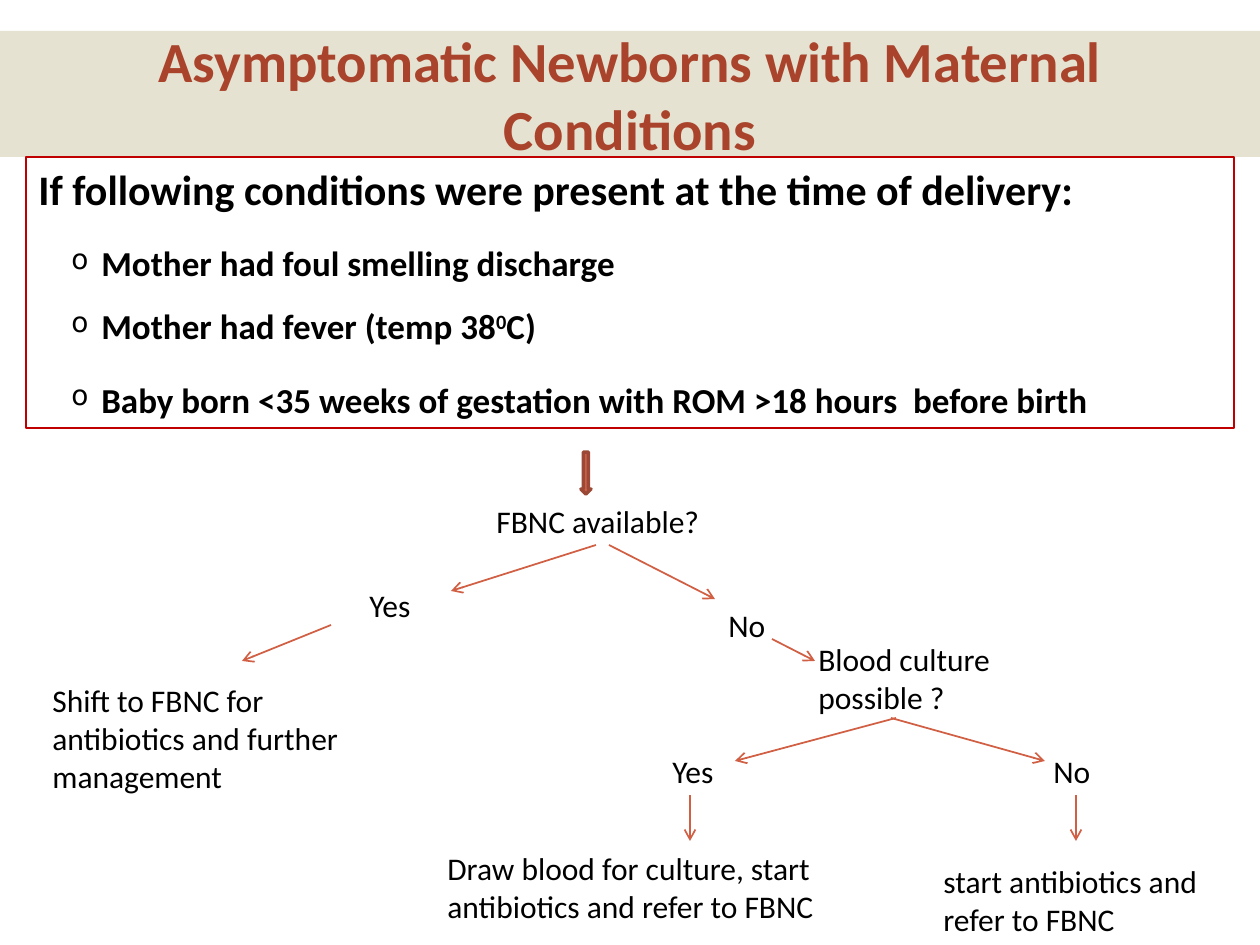
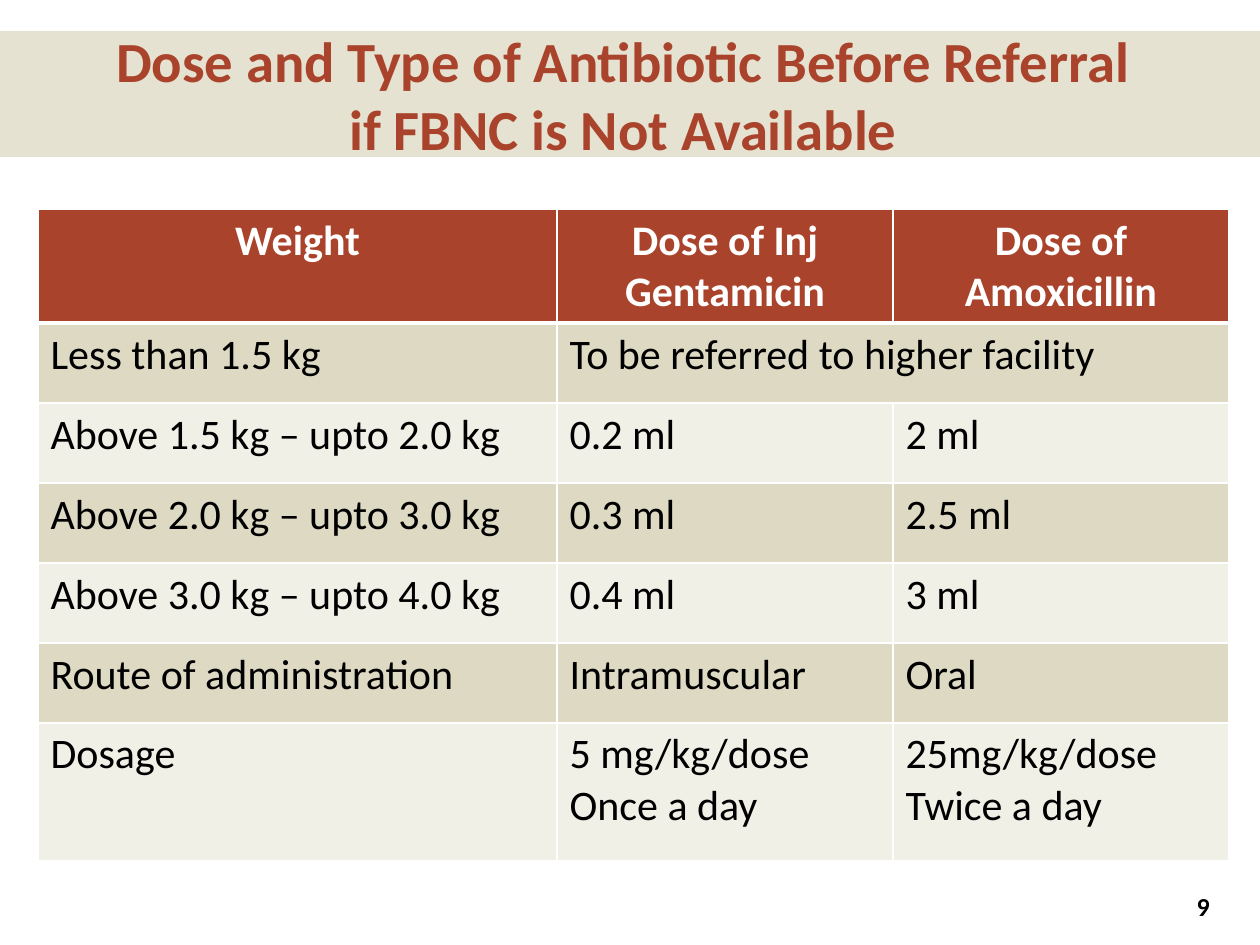
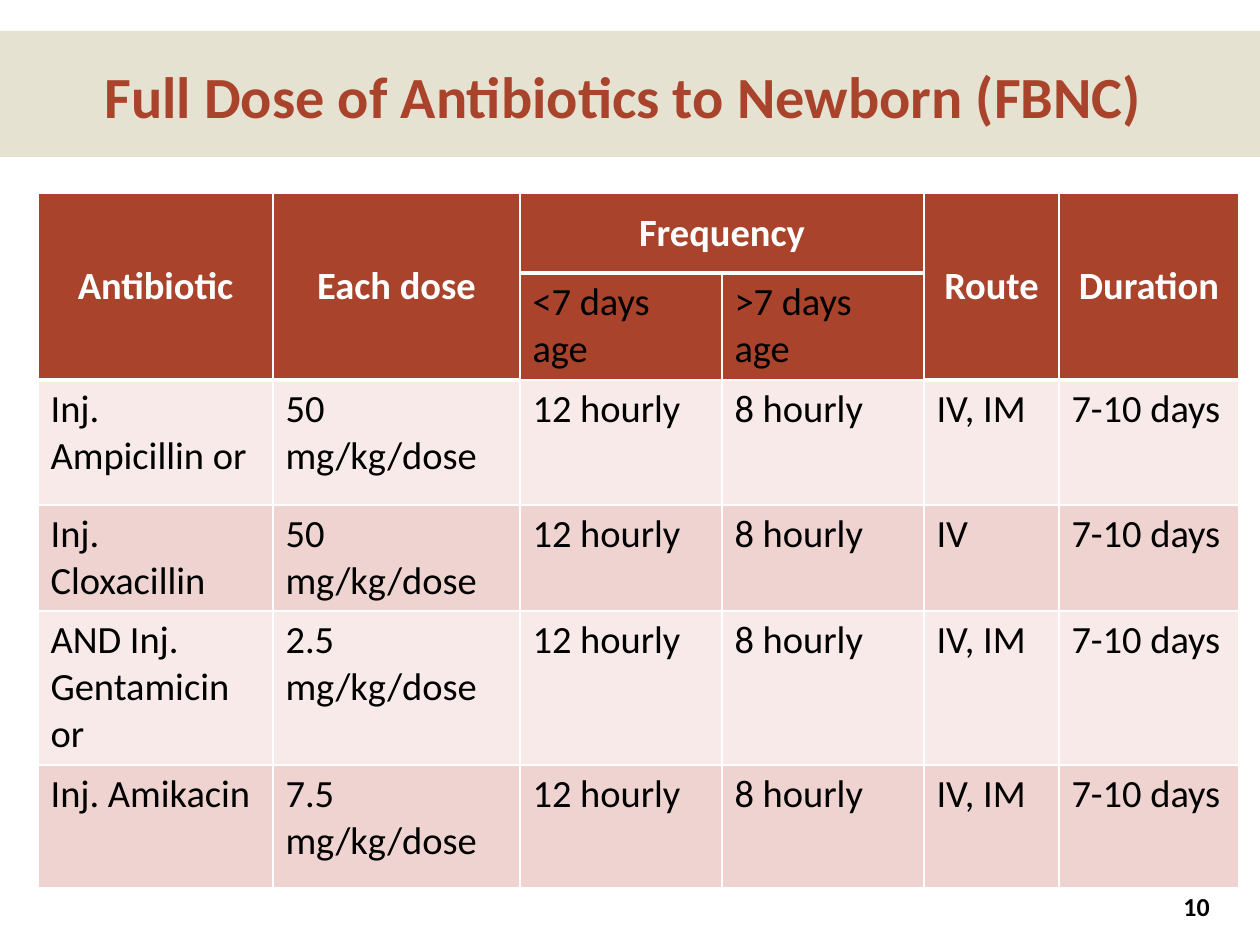
from lxml import etree
from pptx import Presentation
from pptx.dml.color import RGBColor
from pptx.enum.shapes import MSO_CONNECTOR, MSO_SHAPE
from pptx.enum.text import MSO_ANCHOR, PP_ALIGN
from pptx.oxml.ns import qn
from pptx.util import Emu, Pt

RECTANGLE, DOWN_ARROW = MSO_SHAPE.RECTANGLE, MSO_SHAPE.DOWN_ARROW
STRAIGHT = MSO_CONNECTOR.STRAIGHT
TOP, MIDDLE, BOTTOM = MSO_ANCHOR.TOP, MSO_ANCHOR.MIDDLE, MSO_ANCHOR.BOTTOM
LEFT, CENTER, RIGHT = PP_ALIGN.LEFT, PP_ALIGN.CENTER, PP_ALIGN.RIGHT

FONT = "Calibri"
BLACK, WHITE, RUST, SAND = "000000", "FFFFFF", "A9432B", "DDD9C3"
rgb = RGBColor.from_string


def px(*lengths):
    """Lengths in px, 126 to the inch, as EMU."""
    return [Emu(round(length * 914400 / 126)) for length in lengths]


def write_text(frame, text, size=18, color=BLACK, bold=False, align=LEFT,
               before=0, after=0):
    """Append paragraphs; \\n parts them, \\v breaks a line, ^ toggles superscript."""
    frame.word_wrap = True
    for line in text.split("\n"):
        para = frame.paragraphs[0]
        if para.runs:
            para = frame.add_paragraph()
        para.alignment = align
        if before or after:
            para.space_before, para.space_after = Pt(before), Pt(after)
        for row, row_text in enumerate(line.split("\v")):
            if row:
                para.add_line_break()
            for part, part_text in enumerate(row_text.split("^")):
                span = para.add_run()
                span.text = part_text
                span.font.name, span.font.size = FONT, Pt(size)
                span.font.bold, span.font.color.rgb = bold, rgb(color)
                if part % 2:
                    span.font._element.set("baseline", "30000")
    return para


deck = Presentation()
deck.slide_width, deck.slide_height = px(1260, 945)

# Shared band, title and page number
TITLES = [
    ("Asymptomatic Newborns with Maternal Conditions", 32.4, (38, 63, 1184, 105), ""),
    ("Dose and Type of Antibiotic Before Referral \vif FBNC is Not Available ",
     32.4, (10, 42, 1239, 126), "9"),
    ("Full Dose of Antibiotics to Newborn (FBNC) ", 33.3, (38, 31, 1184, 105), "10"),
]
pages = []
for title, size, place, number in TITLES:
    page = deck.slides.add_slide(deck.slide_layouts[6])
    pages.append(page)
    band = page.shapes.add_shape(RECTANGLE, *px(0, 31, 1260, 126))
    band.shadow.inherit = False
    band.line.fill.background()
    band.fill.solid()
    band.fill.fore_color.rgb = rgb(SAND)
    tint = band._element.spPr.find(".//" + qn("a:srgbClr"))
    etree.SubElement(tint, qn("a:alpha"), val="76000")

    box = page.shapes.add_textbox(*px(*place))
    box.text_frame.vertical_anchor = BOTTOM
    write_text(box.text_frame, title, size=size, color=RUST, bold=True, align=CENTER)
    if number:
        box = page.shapes.add_textbox(*px(1101, 886, 121, 40))
        box.text_frame.vertical_anchor = MIDDLE
        write_text(box.text_frame, number, size=14.8, bold=True, align=RIGHT)

# Slide 1: conditions box
shapes = pages[0].shapes
conditions = shapes.add_shape(RECTANGLE, *px(26, 157, 1208, 271))
conditions.shadow.inherit = False
conditions.fill.background()
conditions.line.color.rgb, conditions.line.width = rgb("C00000"), Pt(0.75)
frame = conditions.text_frame
frame.vertical_anchor = TOP
write_text(frame, "If following conditions were present at the time of delivery:",
           size=24, bold=True)
CONDITIONS = [
    ("Mother had foul smelling discharge", 16, 6),
    ("Mother had fever (temp 38^0^C)", 6, 12),
    ("Baby born <35 weeks of gestation with ROM >18 hours  before birth", 6, 0),
]
for text, before, after in CONDITIONS:
    para = write_text(frame, text, size=20, bold=True, before=before, after=after)
    properties = para._p.get_or_add_pPr()
    margin, indent = px(63, -30)
    properties.set("marL", str(margin))
    properties.set("indent", str(indent))
    etree.SubElement(properties, qn("a:buSzPct"), val="80000")
    etree.SubElement(properties, qn("a:buChar"), char="o")

# Slide 1: block arrow into the decision tree
block_arrow = shapes.add_shape(DOWN_ARROW, *px(581, 452, 10, 42))
block_arrow.shadow.inherit = False
block_arrow.fill.solid()
block_arrow.fill.fore_color.rgb = rgb("D16349")
block_arrow.line.color.rgb, block_arrow.line.width = rgb("9B4936"), Pt(2)

# Slide 1: decision tree texts
STEPS = [
    ("FBNC available?", 484, 496, 357, 50),
    ("Yes", 357, 580, 113, 50),
    ("No", 716, 600, 113, 50),
    ("Shift to FBNC for antibiotics and further management", 40, 675, 348, 127),
    ("Blood culture possible ?", 806, 634, 252, 89),
    ("Yes", 660, 746, 113, 50),
    ("No", 1041, 746, 113, 50),
    ("Draw blood for culture, start antibiotics and refer to FBNC", 435, 843, 446, 89),
    ("start antibiotics and refer to FBNC", 931, 856, 294, 89),
]
for text, *place in STEPS:
    box = shapes.add_textbox(*px(*place))
    write_text(box.text_frame, text)

# Slide 1: decision tree arrows
ARROWS = [
    (609, 545, 715, 599), (596, 545, 451, 591),
    (331, 625, 242, 661), (772, 639, 815, 661),
    (891, 718, 1045, 761), (896, 718, 735, 761),
    (690, 795, 690, 841), (1076, 795, 1076, 841),
]
for ends in ARROWS:
    arrow = shapes.add_connector(STRAIGHT, *px(*ends))
    arrow.line.color.rgb, arrow.line.width = rgb("D05F44"), Pt(1)
    etree.SubElement(arrow.line._get_or_add_ln(), qn("a:tailEnd"), type="arrow")
    etree.SubElement(arrow._element.spPr, qn("a:effectLst"))

# Slides 2 and 3: dose tables
DOSES = [
    ["Weight", "Dose of Inj Gentamicin", "Dose of Amoxicillin"],
    ["Less than 1.5 kg", "To be referred to higher facility", ""],
    ["Above 1.5 kg – upto 2.0 kg", "0.2 ml", "2 ml"],
    ["Above 2.0 kg – upto 3.0 kg", "0.3 ml", "2.5 ml"],
    ["Above 3.0 kg – upto 4.0 kg", "0.4 ml", "3 ml"],
    ["Route of administration", "Intramuscular", "Oral"],
    ["Dosage", "5 mg/kg/dose\nOnce a day", "25mg/kg/dose\nTwice a day"],
]
INTERVALS = ["12 hourly", "8 hourly"]
DURATION = "7-10 days"
FULL_DOSES = [
    ["Antibiotic", "Each dose", "Frequency", "", "Route", "Duration"],
    ["", "", "<7 days age", ">7 days age", "", ""],
    ["Inj. Ampicillin or", "50 mg/kg/dose", *INTERVALS, "IV, IM", DURATION],
    ["Inj. Cloxacillin", "50 mg/kg/dose", *INTERVALS, "IV", DURATION],
    ["AND Inj. Gentamicin or", "2.5 mg/kg/dose", *INTERVALS, "IV, IM", DURATION],
    ["Inj. Amikacin", "7.5 mg/kg/dose", *INTERVALS, "IV, IM", DURATION],
]
# page, content, top, column widths, row heights, text size, header rows,
# header anchor, alternating fills, merges (row, column to row, column)
TABLES = [
    (pages[1], DOSES, 209, [519, 336, 336], [114] + [80] * 5 + [138], 24, 1,
     TOP, [SAND, "F1F0E7"], [(1, 1, 1, 2)]),
    (pages[2], FULL_DOSES, 193, [235, 247, 202, 202, 135, 180],
     [80, 107, 125, 106, 154, 123], 22, 2, MIDDLE, ["F7EAE9", "EED3D0"],
     [(0, 2, 0, 3)] + [(0, column, 1, column) for column in (0, 1, 4, 5)]),
]
for page, content, top, widths, heights, size, headers, anchor, fills, merges in TABLES:
    table = page.shapes.add_table(
        len(heights), len(widths), *px(38, top, sum(widths), sum(heights))).table
    table.first_row = table.horz_banding = False
    for column, width in zip(table.columns, px(*widths)):
        column.width = width
    for row, height in zip(table.rows, px(*heights)):
        row.height = height
    for row, column, last_row, last_column in merges:
        table.cell(row, column).merge(table.cell(last_row, last_column))

    for row, texts in enumerate(content):
        for column, text in enumerate(texts):
            cell = table.cell(row, column)
            in_header = row < headers
            heavy = in_header and (row == 0 or cell.is_spanned)
            # White borders, heavy below the header
            for side, width in (("lnL", 1), ("lnR", 1), ("lnB", 3 if heavy else 1)):
                border = etree.SubElement(
                    cell._tc.get_or_add_tcPr(), qn("a:" + side), w=str(Pt(width)))
                solid = etree.SubElement(border, qn("a:solidFill"))
                etree.SubElement(solid, qn("a:srgbClr"), val=WHITE)
            cell.fill.solid()
            cell.fill.fore_color.rgb = rgb(RUST if in_header else fills[(row - headers) % 2])
            if row == 0:
                cell.vertical_anchor = anchor
                write_text(cell.text_frame, text, size=size, color=WHITE, bold=True,
                           align=CENTER)
            else:
                write_text(cell.text_frame, text, size=size)

deck.save("out.pptx")
